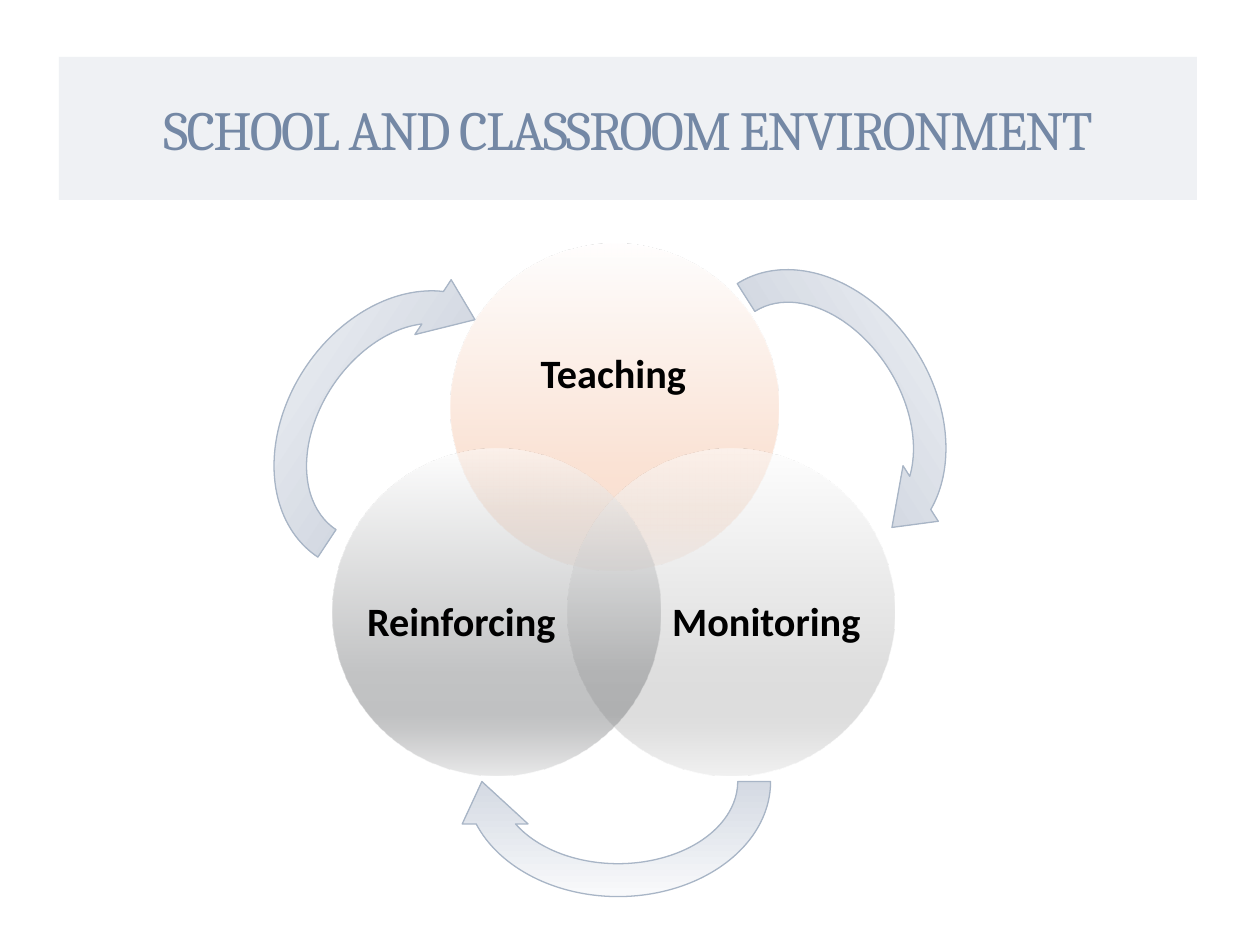
"""Build a slide with three overlapping circles joined in a cycle by curved arrows."""
from lxml.etree import SubElement
from pptx import Presentation
from pptx.dml.color import RGBColor
from pptx.enum.shapes import MSO_SHAPE
from pptx.enum.text import MSO_ANCHOR, PP_ALIGN
from pptx.oxml.ns import qn
from pptx.util import Pt

SCALE = 914400 / 126
STOPS = (0, 68, 81, 86, 100)


def color(value):
    return RGBColor.from_string(value)


def add_gradient_shape(preset, box, colors, alpha=100):
    shape = slide.shapes.add_shape(preset, *(round(length * SCALE) for length in box))
    shape.shadow.inherit = False
    shape.fill.gradient()
    gradient = shape.fill._xPr.find(qn("a:gradFill"))
    gradient.set("rotWithShape", "1")
    stop_list = gradient.find(qn("a:gsLst"))
    for stop in list(stop_list):
        stop_list.remove(stop)
    for position, value in zip(STOPS, colors):
        stop = SubElement(stop_list, qn("a:gs"), pos=str(position * 1000))
        stop_color = SubElement(stop, qn("a:srgbClr"), val=value)
        if alpha < 100:
            SubElement(stop_color, qn("a:alpha"), val=str(alpha * 1000))
    direction = gradient.find(qn("a:lin"))
    direction.set("ang", "5400000")
    direction.set("scaled", "0")
    return shape


presentation = Presentation()
presentation.slide_width = round(1260 * SCALE)
presentation.slide_height = round(945 * SCALE)
slide = presentation.slides.add_slide(presentation.slide_layouts[6])

title_box = (59, 57, 1138, 143)
title = slide.shapes.add_shape(MSO_SHAPE.RECTANGLE, *(round(length * SCALE) for length in title_box))
title.shadow.inherit = False
title.fill.solid()
title.fill.fore_color.rgb = color("EFF1F4")
title.line.fill.background()
title.text_frame.vertical_anchor = MSO_ANCHOR.MIDDLE
paragraph = title.text_frame.paragraphs[0]
paragraph.alignment = PP_ALIGN.CENTER
run = paragraph.add_run()
run.text = "SCHOOL AND CLASSROOM ENVIRONMENT"
run.font.name = "Cambria"
run.font.size = Pt(31.5)
run.font.color.rgb = color("7488A5")
run.font._element.set("spc", "-100")

arrow_colors = ("FEFEFF", "C4CCD8", "C2CAD7", "C8CFDA", "E7EAEE")
arrows = (
    ((650, 281, 338, 263), 57.6),
    ((449, 650, 338, 263), 180),
    ((234, 300, 334, 263), 303.5),
)
for box, rotation in arrows:
    arrow = add_gradient_shape(MSO_SHAPE.CIRCULAR_ARROW, box, arrow_colors)
    arrow.rotation = rotation
    arrow.line.color.rgb = color("A8B5C6")
    arrow.line.width = Pt(0.75)

DIAMETER = 327
circles = (
    ("Teaching", (451, 244), (494, 302, 239, 147),
     ("FFFEFE", "F7C7AB", "F6C5A8", "F7CAB0", "FBE8DE")),
    ("Monitoring", (568, 449), (669, 533, 195, 180),
     ("FEFEFE", "BFBFBF", "BDBDBD", "C3C3C3", "E5E5E5")),
    ("Reinforcing", (333, 449), (364, 533, 195, 180),
     ("FEFEFE", "888A8C", "838587", "929395", "D4D4D5")),
)
for name, corner, label_box, colors in circles:
    circle = add_gradient_shape(MSO_SHAPE.OVAL, (*corner, DIAMETER, DIAMETER), colors, alpha=50)
    circle.line.fill.background()
    label = slide.shapes.add_textbox(*(round(length * SCALE) for length in label_box))
    frame = label.text_frame
    frame.word_wrap = True
    frame.vertical_anchor = MSO_ANCHOR.MIDDLE
    frame.margin_left = frame.margin_right = frame.margin_top = frame.margin_bottom = 0
    paragraph = frame.paragraphs[0]
    paragraph.text = name
    paragraph.alignment = PP_ALIGN.CENTER
    paragraph.line_spacing = 0.9
    paragraph.font.name = "Calibri"
    paragraph.font.size = Pt(23)
    paragraph.font.bold = True
    paragraph.font.color.rgb = color("000000")

presentation.save("out.pptx")
